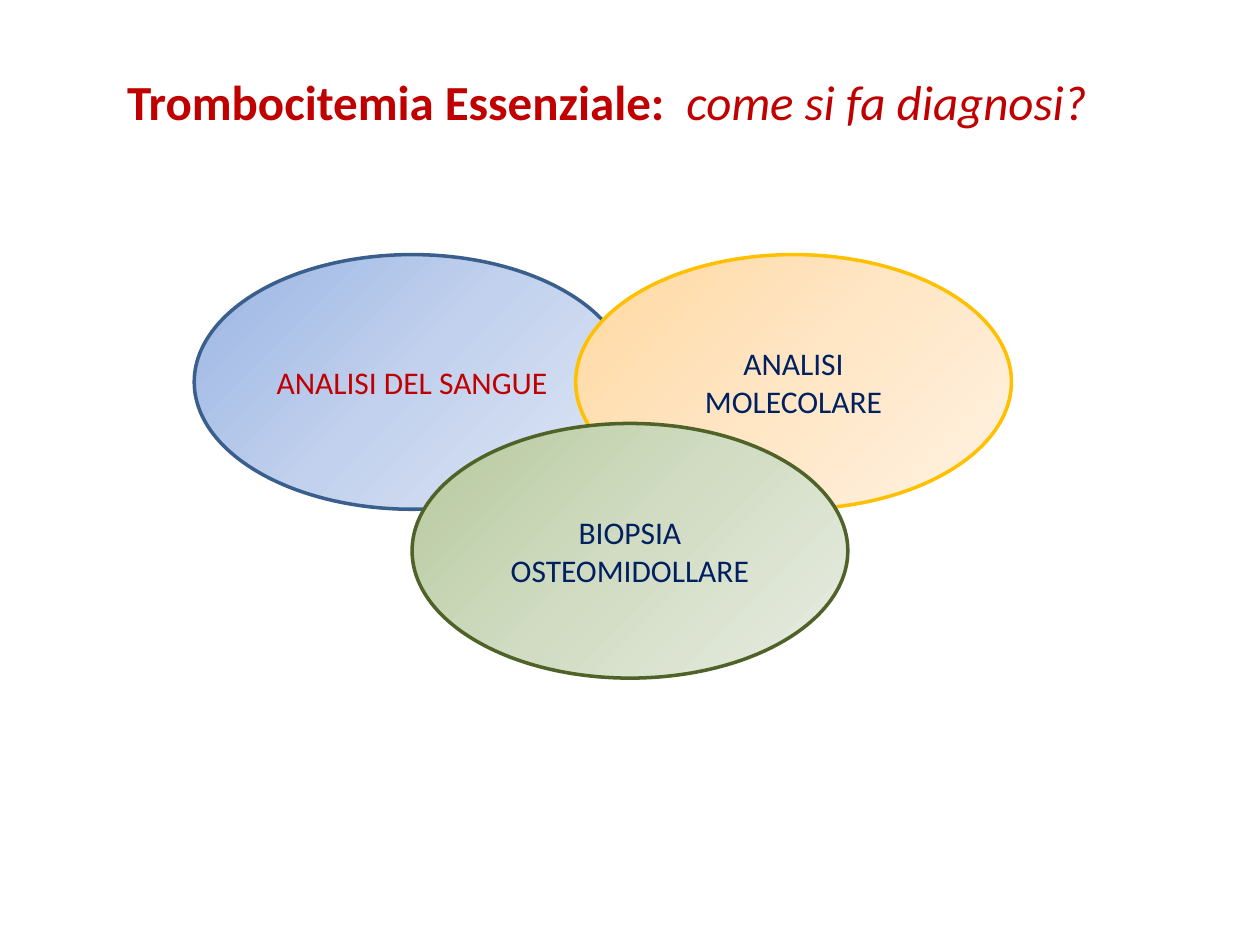
from copy import deepcopy

from pptx import Presentation
from pptx.dml.color import RGBColor
from pptx.enum.shapes import MSO_SHAPE as Shape
from pptx.enum.text import MSO_ANCHOR as Anchor, MSO_AUTO_SIZE as AutoSize, PP_ALIGN as Align
from pptx.oxml.ns import qn
from pptx.util import Pt

COLORS = {
    "red": "C00000",
    "navy": "002060",
    "blood_edge": "3A5F8C",
    "blood_dark": "9AB5E4",
    "blood_mid": "C2D1ED",
    "blood_light": "E1E8F5",
    "molecular_edge": "FFC000",
    "molecular_dark": "FFD8A0",
    "molecular_mid": "FFE6C5",
    "molecular_light": "FFF2E3",
    "biopsy_edge": "4F6228",
    "biopsy_dark": "B6C99C",
    "biopsy_mid": "D1DCC3",
    "biopsy_light": "E8EDE2",
}
FONT = "Calibri"
OVAL_WIDTH, OVAL_HEIGHT = 249, 145.5
TOP_ROW = 145.5


def rgb(name):
    return RGBColor.from_string(COLORS[name])


def add_run(paragraph, text, size, color, bold=False, italic=False):
    run = paragraph.add_run()
    run.text = text
    font = run.font
    font.name, font.size = FONT, Pt(size)
    font.bold, font.italic = bold, italic
    font.color.rgb = rgb(color)


def fill_gradient(oval, theme):
    fill = oval.fill
    fill.gradient()
    fill.gradient_angle = 315
    stop_list = oval._element.spPr.find(qn("a:gradFill")).find(qn("a:gsLst"))
    stop_list.append(deepcopy(stop_list[-1]))
    shades = ((0, "dark"), (0.5, "mid"), (1, "light"))
    for stop, (position, shade) in zip(fill.gradient_stops, shades):
        stop.position = position
        stop.color.rgb = rgb(f"{theme}_{shade}")


def add_title(slide):
    title = slide.shapes.add_textbox(Pt(65.5), Pt(37.5), Pt(569), Pt(41))
    frame = title.text_frame
    frame.word_wrap = False
    frame.auto_size = AutoSize.SHAPE_TO_FIT_TEXT
    heading = frame.paragraphs[0]
    add_run(heading, "Trombocitemia Essenziale: ", 28, "red", bold=True)
    add_run(heading, " come si fa diagnosi?", 28, "red", italic=True)


def add_exam(slide, left, top, label, theme, text_color):
    oval = slide.shapes.add_shape(
        Shape.OVAL, Pt(left), Pt(top), Pt(OVAL_WIDTH), Pt(OVAL_HEIGHT))
    oval.shadow.inherit = False
    fill_gradient(oval, theme)
    oval.line.color.rgb = rgb(f"{theme}_edge")
    oval.line.width = Pt(2)
    frame = oval.text_frame
    frame.word_wrap = True
    frame.vertical_anchor = Anchor.MIDDLE
    caption = frame.paragraphs[0]
    caption.alignment = Align.CENTER
    add_run(caption, label, 18, text_color)


def main():
    deck = Presentation()
    deck.slide_width, deck.slide_height = Pt(720), Pt(540)
    slide = deck.slides.add_slide(deck.slide_layouts[6])
    add_title(slide)
    exams = (
        (111, TOP_ROW, "ANALISI DEL SANGUE", "blood", "red"),
        (329, TOP_ROW, "ANALISI MOLECOLARE", "molecular", "navy"),
        (235.5, 242, "BIOPSIA OSTEOMIDOLLARE", "biopsy", "navy"),
    )
    for exam in exams:
        add_exam(slide, *exam)
    deck.save("out.pptx")


if __name__ == "__main__":
    main()
